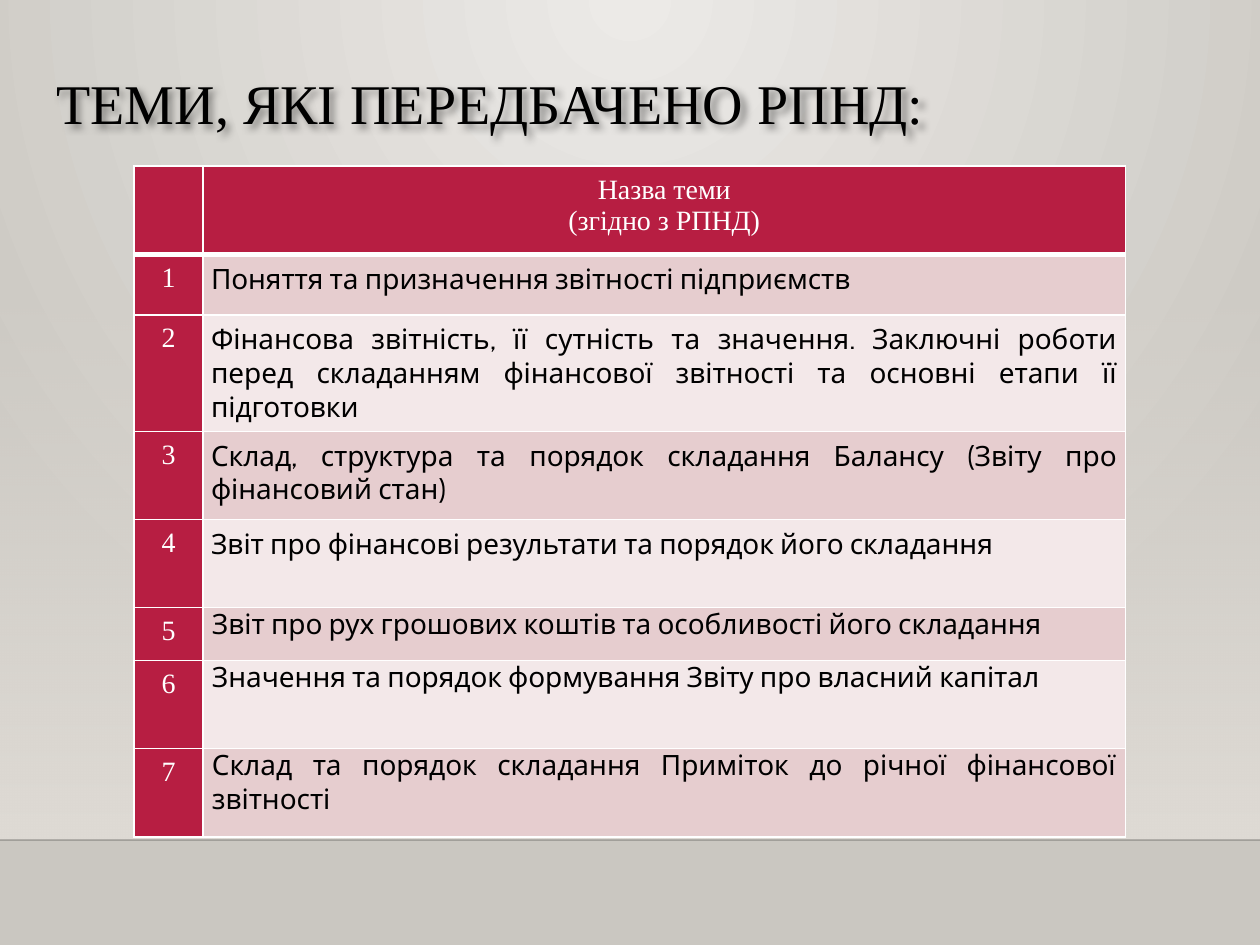
from lxml import etree
from pptx import Presentation
from pptx.dml.color import RGBColor
from pptx.enum.shapes import MSO_CONNECTOR, MSO_SHAPE
from pptx.enum.text import MSO_ANCHOR, PP_ALIGN
from pptx.oxml import parse_xml
from pptx.oxml.ns import nsdecls, qn
from pptx.util import Pt

CENTER, JUSTIFY = PP_ALIGN.CENTER, PP_ALIGN.JUSTIFY
MIDDLE = MSO_ANCHOR.MIDDLE
RECT, STRAIGHT = MSO_SHAPE.RECTANGLE, MSO_CONNECTOR.STRAIGHT

RED = RGBColor(0xB7, 0x1E, 0x42)
ROSE = RGBColor(0xE6, 0xCD, 0xCF)
PALE = RGBColor(0xF3, 0xE8, 0xE9)
WHITE = RGBColor(0xFF, 0xFF, 0xFF)
BLACK = RGBColor(0, 0, 0)
LIGHT = RGBColor(0xEC, 0xEA, 0xE7)
GREY = RGBColor(0xCA, 0xC7, 0xC1)
SAND = RGBColor(0xDF, 0xDB, 0xD5)

SERIF, SANS = "Times New Roman", "Cabin"
WIDTH, HEIGHT, FLOOR = 720, 540, 480
COLS = [39.6, 527]
ROWS = [50.4, 34.5, 34, 50.4, 50.4, 30.2, 50.4, 50.4]
EVEN = (4.5, 4.5)
TIGHT = (5, 0)

TOPICS = [
    ("Поняття та призначення звітності підприємств", EVEN),
    ("Фінансова звітність, її сутність та значення. Заключні роботи перед "
     "складанням фінансової звітності та основні етапи її підготовки", EVEN),
    ("Склад, структура та порядок складання Балансу (Звіту про фінансовий стан)", EVEN),
    ("Звіт про фінансові результати та порядок його складання", EVEN),
    ("Звіт про рух грошових коштів та особливості його складання", TIGHT),
    ("Значення та порядок формування Звіту про власний капітал", TIGHT),
    ("Склад та порядок складання Приміток до річної фінансової звітності", TIGHT),
]


def set_stops(fill, first, last):
    fill.gradient()
    for stop, color in zip(fill.gradient_stops, (first, last)):
        stop.color.rgb = color


def set_alpha(color, percent):
    """Make a srgbClr element partly transparent."""
    etree.SubElement(color, qn("a:alpha")).set("val", str(percent * 1000))


def paint_back(slide):
    """Light glow from the middle of the top edge."""
    fill = slide.background.fill
    set_stops(fill, LIGHT, GREY)
    grad = slide.element.find(".//" + qn("a:gradFill"))
    grad.remove(grad.find(qn("a:lin")))
    grad.append(parse_xml(
        f'<a:path {nsdecls("a")} path="circle">'
        '<a:fillToRect l="43000" t="0" r="43000" b="100000"/></a:path>'))


def add_wall(slide):
    wall = slide.shapes.add_shape(RECT, 0, Pt(158.4), Pt(WIDTH), Pt(FLOOR - 158.4))
    wall.shadow.inherit = False
    wall.line.fill.background()
    set_stops(wall.fill, SAND, SAND)
    wall.fill.gradient_angle = 270
    set_alpha(wall.element.find(".//" + qn("a:srgbClr")), 0)


def add_edge(slide):
    edge = slide.shapes.add_connector(STRAIGHT, 0, Pt(FLOOR), Pt(WIDTH), Pt(FLOOR))
    edge.line.width = Pt(1)
    edge.line.color.rgb = BLACK
    props = edge.element.spPr
    set_alpha(props.find(".//" + qn("a:srgbClr")), 20)
    etree.SubElement(props, qn("a:effectLst"))


def style(par, font, size, color):
    for run in par.runs:
        run.font.name = font
        run.font.size = Pt(size)
        run.font.color.rgb = color


def add_title(slide, text):
    box = slide.shapes.add_textbox(Pt(25.2), Pt(37.4), Pt(596), Pt(51))
    frame = box.text_frame
    frame.word_wrap = True
    frame.vertical_anchor = MIDDLE
    frame.margin_bottom = Pt(8)
    frame.text = text
    par = frame.paragraphs[0]
    par.line_spacing = 0.9
    style(par, SERIF, 32, BLACK)
    box.element.spPr.append(parse_xml(
        f'<a:effectLst {nsdecls("a")}>'
        '<a:outerShdw blurRad="50800" dist="38100" dir="2700000">'
        '<a:srgbClr val="000000"><a:alpha val="40000"/></a:srgbClr>'
        '</a:outerShdw></a:effectLst>'))


def set_edges(cell, top, bottom):
    """White borders; the widths of top and bottom are in points."""
    props = cell._tc.get_or_add_tcPr()
    for side, width in (("L", 1), ("R", 1), ("T", top), ("B", bottom)):
        props.append(parse_xml(
            f'<a:ln{side} {nsdecls("a")} w="{Pt(width)}"><a:solidFill>'
            f'<a:srgbClr val="{WHITE}"/></a:solidFill></a:ln{side}>'))


def fill_cell(cell, text, font, color, align, pads, back):
    cell.margin_left = cell.margin_right = Pt(pads[0])
    cell.margin_top = cell.margin_bottom = Pt(pads[1])
    cell.fill.solid()
    cell.fill.fore_color.rgb = back
    cell.text_frame.text = text
    for par in cell.text_frame.paragraphs:
        par.alignment = align
        style(par, font, 16, color)


def add_topics(slide):
    frame = slide.shapes.add_table(len(ROWS), len(COLS), Pt(76.5), Pt(95),
                                   Pt(sum(COLS)), Pt(sum(ROWS)))
    table = frame.table
    for col, width in zip(table.columns, COLS):
        col.width = Pt(width)
    for num, (row, height) in enumerate(zip(table.rows, ROWS)):
        row.height = Pt(height)
        for cell in row.cells:
            set_edges(cell, 3 if num == 1 else 1, 3 if num == 0 else 1)

    heads = ["", "Назва теми\n(згідно з РПНД)"]
    for cell, text in zip(table.rows[0].cells, heads):
        fill_cell(cell, text, SERIF, WHITE, CENTER, EVEN, RED)
    for num, (topic, pads) in enumerate(TOPICS, 1):
        back = ROSE if num % 2 else PALE
        fill_cell(table.cell(num, 0), str(num), SERIF, WHITE, CENTER, EVEN, RED)
        fill_cell(table.cell(num, 1), topic, SANS, BLACK, JUSTIFY, pads, back)


def main():
    deck = Presentation()
    deck.slide_width, deck.slide_height = Pt(WIDTH), Pt(HEIGHT)
    slide = deck.slides.add_slide(deck.slide_layouts[6])
    paint_back(slide)
    add_wall(slide)
    add_edge(slide)
    add_title(slide, "ТЕМИ, ЯКІ ПЕРЕДБАЧЕНО РПНД:")
    add_topics(slide)
    deck.save("out.pptx")


if __name__ == "__main__":
    main()
